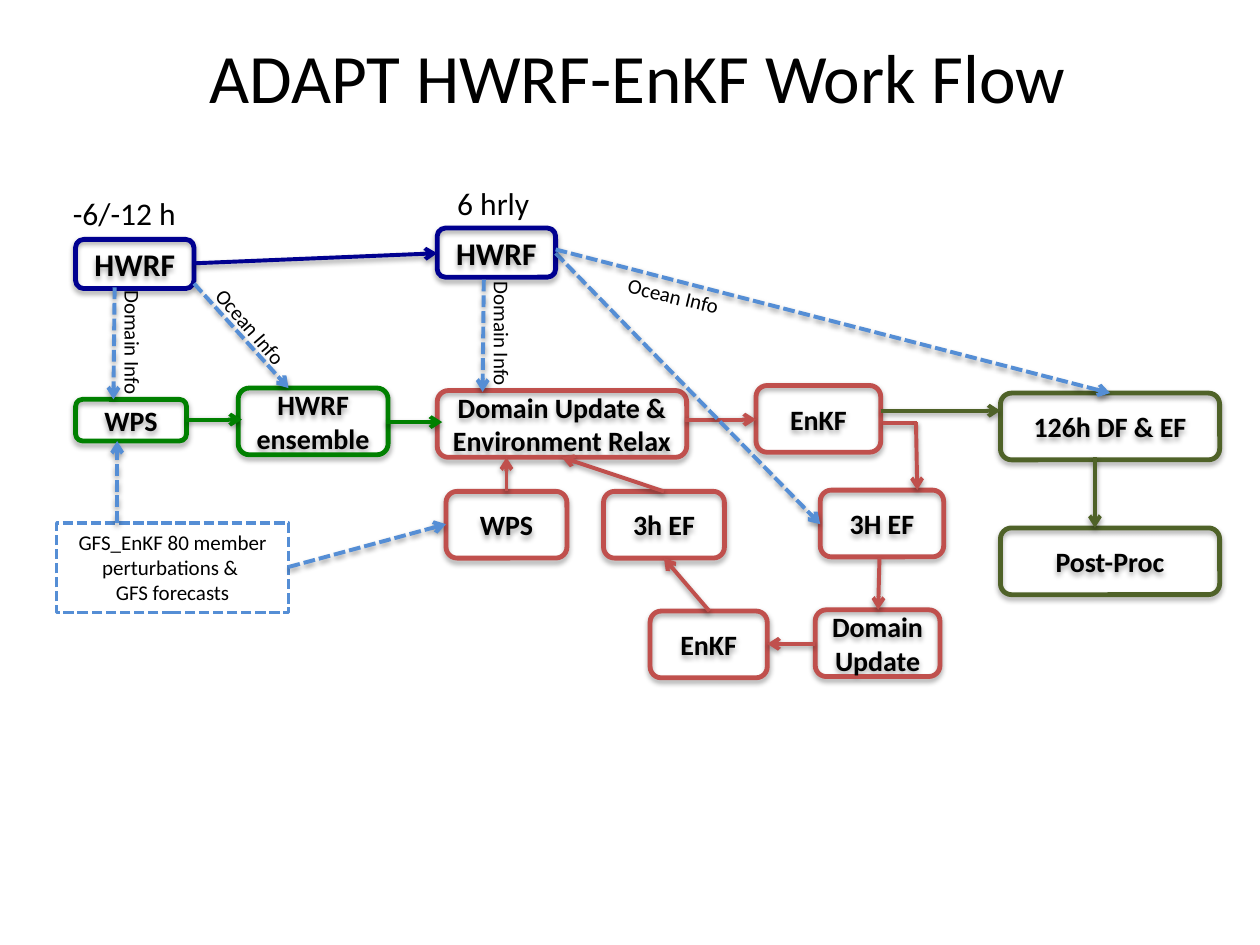
import lxml.etree
import pptx
import pptx.dml.color
import pptx.enum.dml
import pptx.enum.shapes
import pptx.enum.text
import pptx.oxml.ns
import pptx.util

RGB = pptx.dml.color.RGBColor
BLACK = RGB(0x00, 0x00, 0x00)
NAVY = RGB(0x00, 0x00, 0x90)
GREEN = RGB(0x00, 0x80, 0x00)
RED = RGB(0xC0, 0x50, 0x4D)
OLIVE = RGB(0x4F, 0x62, 0x28)
BLUE = RGB(0x55, 0x8E, 0xD5)

PX = 9144  # EMU, 100 px to the inch
Pt = pptx.util.Pt
qn = pptx.oxml.ns.qn
SubElement = lxml.etree.SubElement
ALIGN = pptx.enum.text.PP_ALIGN
ANCHOR = pptx.enum.text.MSO_ANCHOR
SHAPE = pptx.enum.shapes.MSO_SHAPE
DASH = pptx.enum.dml.MSO_LINE.SQUARE_DOT
GROW = pptx.enum.text.MSO_AUTO_SIZE.SHAPE_TO_FIT_TEXT


def write(frame, text, size=16, bold=False, align=ALIGN.CENTER,
          anchor=ANCHOR.MIDDLE, wrap=True):
    frame.word_wrap = wrap
    frame.vertical_anchor = anchor
    for i, line in enumerate(text.split("\n")):
        para = frame.add_paragraph() if i else frame.paragraphs[0]
        para.alignment = align
        run = para.add_run()
        run.text = line
        font = run.font
        font.name, font.size, font.bold = "Calibri", Pt(size), bold
        font.color.rgb = BLACK


def shade(props, alpha, dist):
    """Add a soft black shadow below; alpha in percent, dist in EMU."""
    effects = SubElement(props, qn("a:effectLst"))
    outer = SubElement(effects, qn("a:outerShdw"), blurRad="40000",
                       dist=str(dist), dir="5400000", rotWithShape="0")
    black = SubElement(outer, qn("a:srgbClr"), val="000000")
    SubElement(black, qn("a:alpha"), val=str(alpha * 1000))


deck = pptx.Presentation()
deck.slide_width, deck.slide_height = 1000 * PX, 750 * PX
slide = deck.slides.add_slide(deck.slide_layouts[5])
shapes = slide.shapes

title = shapes.title
title.left, title.top, title.width, title.height = [
    n * PX for n in (56, 24, 900, 72)]
write(title.text_frame, "ADAPT HWRF-EnKF Work Flow", size=39.6)

# Steps: text, left, top, width, height, colour
steps = [
    ("HWRF", 60, 190, 94, 39, NAVY),
    ("HWRF", 347, 181, 94, 39, NAVY),
    ("WPS", 60, 317, 88, 33, GREEN),
    ("HWRF ensemble", 189, 308, 119, 53, GREEN),
    ("Domain Update &\nEnvironment Relax", 347, 310, 198, 53, RED),
    ("EnKF", 600, 306, 99, 53, RED),
    ("WPS", 354, 390, 96, 53, RED),
    ("3h EF", 479, 390, 96, 53, RED),
    ("3H EF", 651, 389, 98, 53, RED),
    ("EnKF", 516, 485, 93, 53, RED),
    ("Domain\nUpdate", 647, 484, 99, 53, RED),
    ("126h DF & EF", 794, 312, 174, 53, OLIVE),
    ("Post-Proc", 794, 419, 174, 53, OLIVE),
]
for text, x, y, w, h, color in steps:
    box = shapes.add_shape(SHAPE.ROUNDED_RECTANGLE,
                           x * PX, y * PX, w * PX, h * PX)
    box.fill.background()
    box.line.color.rgb = color
    box.line.width = Pt(2.75)
    shade(box._element.spPr, 35, 23000)
    if "Relax" in text:
        box.text_frame.margin_left = box.text_frame.margin_right = 0
    write(box.text_frame, text, size=18 if color == NAVY else 16, bold=True)

source = shapes.add_shape(SHAPE.RECTANGLE, 45 * PX, 415 * PX, 184 * PX, 71 * PX)
source.shadow.inherit = False
source.fill.background()
source.line.color.rgb = BLUE
source.line.width = Pt(2)
source.line.dash_style = DASH
write(source.text_frame, "GFS_EnKF 80 member perturbations & \nGFS forecasts",
      size=12, anchor=ANCHOR.TOP)

# Links: start x, y, end x, y, colour; blue ones are dashed
links = [
    (154, 209, 347, 201, NAVY),
    (148, 333, 192, 333, GREEN),
    (306, 335, 351, 335, GREEN),
    (544, 333, 600, 333, RED),
    (698, 443, 697, 484, RED),
    (647, 511, 609, 511, RED),
    (563, 485, 527, 443, RED),
    (527, 390, 446, 363, RED),
    (402, 390, 402, 363, RED),
    (701, 336, 728, 336, RED),
    (727, 335, 728, 389, RED),
    (699, 326, 794, 326, OLIVE),
    (869, 363, 869, 419, OLIVE),
    (91, 228, 90, 317, BLUE),
    (93, 415, 93, 350, BLUE),
    (154, 225, 229, 308, BLUE),
    (384, 222, 383, 311, BLUE),
    (441, 201, 651, 416, BLUE),
    (441, 198, 881, 312, BLUE),
    (229, 450, 354, 416, BLUE),
]
bend = (701, 336)  # the first leg of the bent link has no arrowhead
for x1, y1, x2, y2, color in links:
    link = shapes.add_connector(pptx.enum.shapes.MSO_CONNECTOR.STRAIGHT,
                                x1 * PX, y1 * PX, x2 * PX, y2 * PX)
    link.line.color.rgb = color
    link.line.width = Pt(2.25)
    if color == BLUE:
        link.line.dash_style = DASH
    props = link._element.spPr
    if (x1, y1) != bend:
        SubElement(props.find(qn("a:ln")), qn("a:tailEnd"), type="arrow")
    shade(props, 38, 20000)

# Labels: text, left, top, width, height, size, turn in degrees
labels = [
    ("-6/-12 h", 48, 149, 103, 40, 18, 0),
    ("6 hrly", 353, 141, 78, 40, 18, 0),
    ("Domain Info", 53, 258, 105, 30, 12, 90),
    ("Domain Info", 346, 251, 105, 30, 12, 90),
    ("Ocean Info", 152, 245, 95, 30, 12, 49.2),
    ("Ocean Info", 488, 220, 95, 30, 12, 13.6),
]
for text, x, y, w, h, size, turn in labels:
    label = shapes.add_textbox(x * PX, y * PX, w * PX, h * PX)
    label.rotation = turn
    write(label.text_frame, text, size=size, align=ALIGN.LEFT,
          anchor=ANCHOR.TOP, wrap=False)
    label.text_frame.auto_size = GROW

deck.save("out.pptx")
